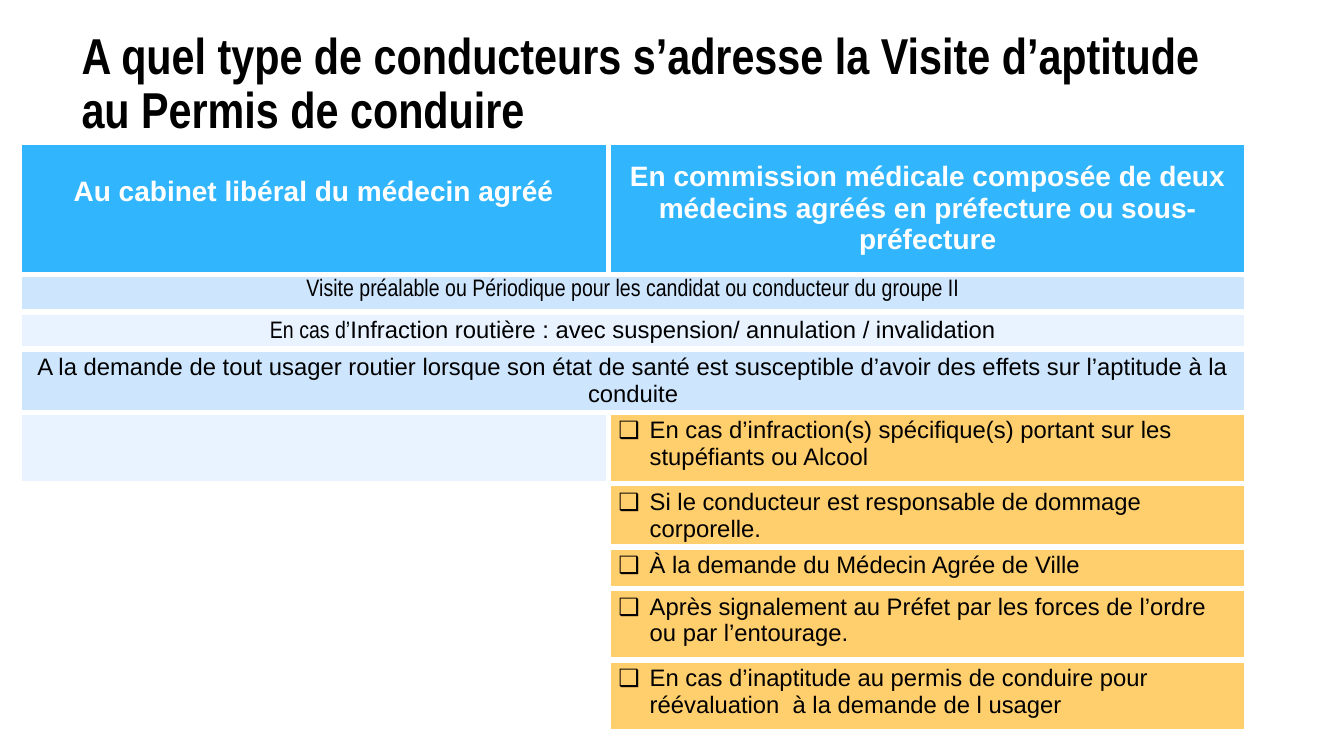
import pptx
import pptx.dml.color
import pptx.enum.text
import pptx.oxml.ns
import pptx.util
from lxml import etree

Cm = pptx.util.Cm
Pt = pptx.util.Pt
ALIGN = pptx.enum.text.PP_ALIGN
ANCHOR = pptx.enum.text.MSO_ANCHOR
qn = pptx.oxml.ns.qn

HEADER, BAND, PALE, AMBER, WHITE, BLACK = (
    "31B6FD", "CEE5FE", "E8F3FF", "FFCE6D", "FFFFFF", "000000")


def colour(value):
    return pptx.dml.color.RGBColor.from_string(value)


class SlideBuilder:
    body_font = "Arial"
    title_font = "Arial Narrow"
    body_size = 17

    def __init__(self, page):
        self.page = page

    def style(self, font, size, name=body_font, shade=BLACK, bold=False):
        font.size, font.name, font.bold = Pt(size), name, bold
        font.color.rgb = colour(shade)

    def title(self, text, left, top, width, height):
        box = self.page.shapes.title
        box.left, box.top, box.width, box.height = map(Cm, (left, top, width, height))
        frame = box.text_frame
        frame.word_wrap = True
        frame.auto_size = pptx.enum.text.MSO_AUTO_SIZE.NONE
        frame.vertical_anchor = ANCHOR.TOP
        para = frame.paragraphs[0]
        para.text = text
        para.alignment, para.line_spacing = ALIGN.LEFT, 0.9
        self.style(para.font, 36, self.title_font, bold=True)

    def table(self, left, top, height, widths, heights):
        frame = self.page.shapes.add_table(
            len(heights), len(widths), Cm(left), Cm(top), Cm(sum(widths)), Cm(height))
        grid = frame.table
        grid.first_row = grid.horz_banding = False
        for column, width in zip(grid.columns, widths):
            column.width = Cm(width)
        for row, row_height in zip(grid.rows, heights):
            row.height = Cm(row_height)
        frame.height = Cm(height)
        for cell in grid.iter_cells():
            self.borders(cell)
        return grid

    def borders(self, cell):
        properties = cell._tc.get_or_add_tcPr()
        for side in ("a:lnL", "a:lnR", "a:lnT", "a:lnB"):
            line = etree.SubElement(properties, qn(side), w=str(Pt(4.5)))
            fill = etree.SubElement(line, qn("a:solidFill"))
            etree.SubElement(fill, qn("a:srgbClr"), val=WHITE)

    def fill(self, cell, shade):
        cell.fill.solid()
        cell.fill.fore_color.rgb = colour(shade)

    def header(self, cell, text):
        self.fill(cell, HEADER)
        cell.vertical_anchor = ANCHOR.MIDDLE
        para = cell.text_frame.paragraphs[0]
        para.text, para.alignment = text, ALIGN.CENTER
        self.style(para.font, 20, shade=WHITE, bold=True)

    def band(self, first, last, shade, parts):
        first.merge(last)
        for cell in (first, last):
            self.fill(cell, shade)
        para = first.text_frame.paragraphs[0]
        para.alignment = ALIGN.CENTER
        for text, name in parts:
            span = para.add_run()
            span.text = text
            self.style(span.font, self.body_size, name)

    def bullet(self, cell, text):
        self.fill(cell, AMBER)
        para = cell.text_frame.paragraphs[0]
        para.text = text
        properties = para._p.get_or_add_pPr()
        properties.set("marL", str(Cm(0.79)))
        properties.set("indent", str(-Cm(0.79)))
        etree.SubElement(properties, qn("a:buFont"), typeface=self.body_font)
        etree.SubElement(properties, qn("a:buChar"), char="❑")
        self.style(para.font, self.body_size)


def main():
    deck = pptx.Presentation()
    deck.slide_width, deck.slide_height = Cm(33.87), Cm(19.05)
    slide = SlideBuilder(deck.slides.add_slide(deck.slide_layouts[5]))

    # Table of the two settings
    grid = slide.table(0.48, 3.58, 15.11, [14.85, 16.1],
                       [3.34, 0.94, 0.74, 0.99, 1.8, 1.07, 1.04, 1.8, 1.8])
    headers = [
        "Au cabinet libéral du médecin agréé",
        "En commission médicale composée de deux médecins agréés "
        "en préfecture ou sous-préfecture",
    ]
    for column, text in enumerate(headers):
        slide.header(grid.cell(0, column), text)
    grid.cell(0, 0).margin_bottom = Cm(0.95)

    # Cases shared by both settings
    narrow, regular = slide.title_font, slide.body_font
    shared = [
        (BAND, [("Visite préalable ou Périodique pour les candidat ou conducteur "
                 "du groupe II", narrow)]),
        (PALE, [("En cas d’", narrow),
                ("Infraction routière : avec suspension/ annulation / invalidation",
                 regular)]),
        (BAND, [("A la demande de tout usager routier lorsque son état de santé est "
                 "susceptible d’avoir des effets sur l’aptitude à la conduite", regular)]),
    ]
    for row, (shade, parts) in enumerate(shared, start=1):
        slide.band(grid.cell(row, 0), grid.cell(row, 1), shade, parts)

    # Cases for the commission only
    commission = [
        "En cas d’infraction(s) spécifique(s) portant sur les stupéfiants ou Alcool",
        "Si le conducteur est responsable de dommage corporelle.",
        "À la demande du Médecin Agrée de Ville",
        "Après signalement au Préfet par les forces de l’ordre ou par l’entourage.",
        "En cas d’inaptitude au permis de conduire pour réévaluation  à la demande "
        "de l usager",
    ]
    first_row = len(shared) + 1
    for row, text in enumerate(commission, start=first_row):
        slide.fill(grid.cell(row, 0), PALE if row == first_row else WHITE)
        slide.bullet(grid.cell(row, 1), text)

    # Title
    slide.title("A quel type de conducteurs s’adresse la Visite d’aptitude "
                "au Permis de conduire", 1.8, 0.65, 29.21, 2.18)

    deck.save("out.pptx")


if __name__ == "__main__":
    main()
